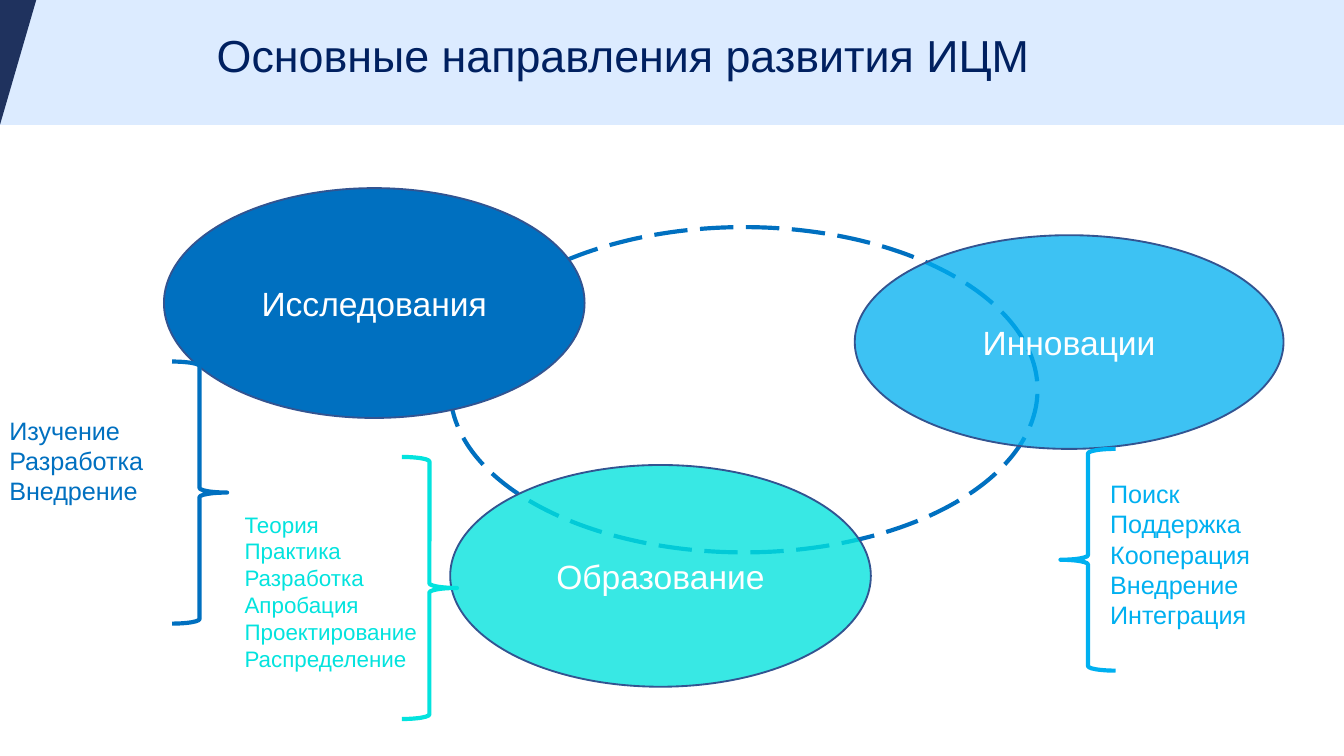
from dataclasses import dataclass

from lxml.etree import SubElement
from pptx import Presentation
from pptx.dml.color import RGBColor
from pptx.enum.dml import MSO_LINE
from pptx.enum.shapes import MSO_SHAPE as Shape
from pptx.enum.text import MSO_ANCHOR as Anchor, PP_ALIGN as Align
from pptx.oxml.ns import qn
from pptx.util import Inches, Pt


@dataclass(frozen=True)
class Theme:
    font: str = "Arial"
    band: str = "DCEBFF"
    wedge: str = "1F325E"
    title: str = "002060"
    research: str = "0070C0"
    education: str = "03E3DE"
    innovation: str = "00B0F0"
    outline: str = "325491"
    label: str = "FFFFFF"
    title_size: float = 24
    label_size: float = 18
    list_size: float = 13.5
    small_size: float = 12
    thin: float = 1
    thick: float = 2.25


THEME = Theme()


def paint(shape, fill=None, line=None, width=THEME.thin, opacity=100):
    shape.shadow.inherit = False
    if fill:
        shape.fill.solid()
        shape.fill.fore_color.rgb = RGBColor.from_string(fill)
        if opacity < 100:
            color = shape.fill._xPr.find(qn("a:solidFill"))[0]
            SubElement(color, qn("a:alpha"), val=str(opacity * 1000))
    else:
        shape.fill.background()
    if line:
        shape.line.color.rgb = RGBColor.from_string(line)
        shape.line.width = Pt(width)
    else:
        shape.line.fill.background()


def add_preset(page, kind, box, **style):
    shape = page.shapes.add_shape(kind, *map(Inches, box))
    paint(shape, **style)
    return shape


def write(shape, lines, size, color, align=Align.LEFT, anchor=Anchor.TOP,
          wrap=True, spacing=1.0):
    frame = shape.text_frame
    settings = {
        "word_wrap": wrap, "vertical_anchor": anchor,
        "margin_left": Inches(0.07), "margin_right": Inches(0.07),
        "margin_top": Inches(0.04), "margin_bottom": Inches(0.04),
    }
    for name, value in settings.items():
        setattr(frame, name, value)
    for index, line in enumerate(lines):
        para = frame.add_paragraph() if index else frame.paragraphs[0]
        para.alignment = align
        para.line_spacing = spacing
        span = para.add_run()
        span.text = line
        for name, value in {"name": THEME.font, "size": Pt(size)}.items():
            setattr(span.font, name, value)
        span.font.color.rgb = RGBColor.from_string(color)


def add_header(page, box, title):
    left, top, width, height = box
    add_preset(page, Shape.RECTANGLE, box, fill=THEME.band)
    builder = page.shapes.build_freeform(Inches(left), Inches(top))
    builder.add_line_segments([
        (Inches(left + 0.27), Inches(top)),
        (Inches(left), Inches(top + height)),
    ])
    paint(builder.convert_to_shape(), fill=THEME.wedge)
    heading = page.shapes.add_textbox(
        *map(Inches, (left + 0.69, top + 0.21, 7.89, 0.5)))
    write(heading, [title], THEME.title_size, THEME.title, Align.CENTER, spacing=0.9)


def add_orbit(page, box):
    """Dashed ring that links the three directions."""
    ring = add_preset(page, Shape.OVAL, box, line=THEME.research, width=THEME.thick)
    ring.line.dash_style = MSO_LINE.LONG_DASH


def add_direction(page, box, name, color, opacity=100):
    oval = add_preset(page, Shape.OVAL, box, fill=color,
                      line=THEME.outline, opacity=opacity)
    write(oval, [name], THEME.label_size, THEME.label, Align.CENTER, Anchor.MIDDLE)


def add_activities(page, box, brace, offset, text_size, lines, color, size, wrap=True):
    """Brace filling the box, with its list placed at an offset from the box corner."""
    left, top = box[:2]
    add_preset(page, brace, box, line=color, width=THEME.thick)
    text_box = page.shapes.add_textbox(
        Inches(left + offset[0]), Inches(top + offset[1]), *map(Inches, text_size))
    write(text_box, lines, size, color, wrap=wrap)


def main():
    deck = Presentation()
    deck.slide_width = Inches(10)
    deck.slide_height = deck.slide_width * 9 // 16
    page = deck.slides.add_slide(deck.slide_layouts[6])

    add_header(page, (0, 0, 10, 0.93), "Основные направления развития ИЦМ")
    add_orbit(page, (3.35, 1.69, 4.37, 2.42))

    add_direction(page, (1.22, 1.4, 3.13, 1.71), "Исследования", THEME.research)
    add_direction(page, (3.35, 3.46, 3.13, 1.65), "Образование", THEME.education, 79)
    add_direction(page, (6.36, 1.75, 3.19, 1.59), "Инновации", THEME.innovation, 76)

    add_activities(
        page, (1.28, 2.69, 0.41, 1.95), Shape.RIGHT_BRACE, (-1.28, 0.36), (1.24, 0.76),
        ["Изучение", "Разработка", "Внедрение"], THEME.research, THEME.list_size)
    add_activities(
        page, (2.99, 3.4, 0.41, 1.95), Shape.RIGHT_BRACE, (-1.24, 0.36), (1.54, 1.29),
        ["Теория", "Практика", "Разработка", "Апробация", "Проектирование",
         "Распределение"], THEME.education, THEME.small_size)
    add_activities(
        page, (7.89, 3.34, 0.41, 1.65), Shape.LEFT_BRACE, (0.3, 0.18), (1.21, 1.44),
        ["Поиск", "Поддержка", "Кооперация", "Внедрение", "Интеграция"],
        THEME.innovation, THEME.list_size, wrap=False)

    deck.save("out.pptx")


if __name__ == "__main__":
    main()
